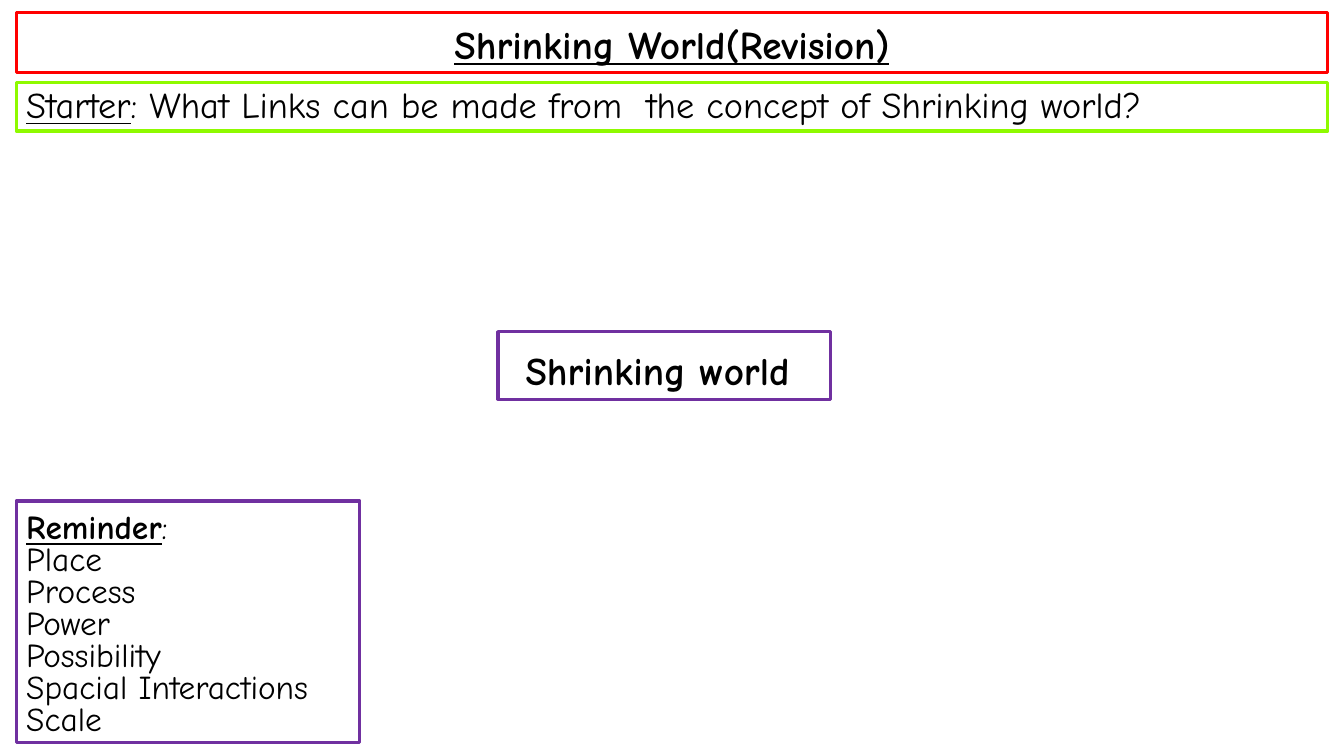
from dataclasses import dataclass

from lxml import etree
from pptx import Presentation
from pptx.dml.color import RGBColor
from pptx.enum.shapes import MSO_SHAPE
from pptx.enum.text import MSO_ANCHOR, MSO_AUTO_SIZE, PP_ALIGN
from pptx.oxml.ns import qn
from pptx.util import Emu, Pt

RECTANGLE = MSO_SHAPE.RECTANGLE
BOTTOM = MSO_ANCHOR.BOTTOM
NO_AUTOFIT = MSO_AUTO_SIZE.NONE
LEFT, CENTER = PP_ALIGN.LEFT, PP_ALIGN.CENTER
PX = 9144  # EMU per px, 100 px to the inch
TWO_CONTENT = 3


@dataclass(frozen=True)
class Theme:
    font: str = "Comic Neue"
    text: RGBColor = RGBColor(0, 0, 0)
    title_line: RGBColor = RGBColor(0xFF, 0, 0)
    starter_line: RGBColor = RGBColor(0x8E, 0xFA, 0)
    topic_line: RGBColor = RGBColor(0x70, 0x30, 0xA0)
    line_width: float = 2.25
    heading_size: float = 28
    starter_size: float = 25.9
    reminder_size: float = 23.8


THEME = Theme()
REMINDERS = ["Place", "Process", "Power", "Possibility",
             "Spacial Interactions", "Scale"]


def frame(box, left, top, width, height, color):
    """Place a box and give it a coloured outline."""
    box.left, box.top = Emu(left * PX), Emu(top * PX)
    box.width, box.height = Emu(width * PX), Emu(height * PX)
    box.fill.background()
    box.line.color.rgb = color
    box.line.width = Pt(THEME.line_width)


def write(box, paragraphs, size, align=LEFT, spacing=0.8):
    """Fill a box with paragraphs of (text, bold, underline) runs."""
    text = box.text_frame
    text.word_wrap = True
    text.auto_size = NO_AUTOFIT
    text.vertical_anchor = BOTTOM
    for index, runs in enumerate(paragraphs):
        paragraph = text.add_paragraph() if index else text.paragraphs[0]
        paragraph.alignment = align
        paragraph.line_spacing = spacing
        paragraph.space_before = Pt(0)
        remove_bullet(paragraph)
        for words, bold, underline in runs:
            run = paragraph.add_run()
            run.text = words
            font = run.font
            font.name, font.size = THEME.font, Pt(size)
            font.color.rgb = THEME.text
            font.bold, font.underline = bold, underline


def remove_bullet(paragraph):
    properties = paragraph._p.get_or_add_pPr()
    properties.set("marL", "0")
    properties.set("indent", "0")
    etree.SubElement(properties, qn("a:buNone"))


def main():
    deck = Presentation()
    deck.slide_width, deck.slide_height = Emu(1333 * PX), Emu(750 * PX)
    slide = deck.slides.add_slide(deck.slide_layouts[TWO_CONTENT])
    title, starter, reminder = slide.placeholders

    # Lesson title
    frame(title, 16, 12, 1301, 60, THEME.title_line)
    write(title, [[("Shrinking World(Revision)", True, True)]],
          THEME.heading_size, CENTER, 0.9)

    # Starter question
    frame(starter, 16, 82, 1301, 48, THEME.starter_line)
    question = ": What Links can be made from  the concept of Shrinking world?"
    write(starter, [[("Starter", False, True), (question, False, False)]],
          THEME.starter_size)

    # Reminder list
    frame(reminder, 16, 497, 341, 240, THEME.topic_line)
    heading = [("Reminder", True, True), (":", False, False)]
    write(reminder, [heading] + [[(word, False, False)] for word in REMINDERS],
          THEME.reminder_size)

    # Central topic
    topic = slide.shapes.add_shape(RECTANGLE, 0, 0, PX, PX)
    topic.shadow.inherit = False
    frame(topic, 494, 329, 330, 67, THEME.topic_line)
    write(topic, [[("Shrinking world ", True, False)]],
          THEME.heading_size, CENTER, 0.9)

    deck.save("out.pptx")


if __name__ == "__main__":
    main()
